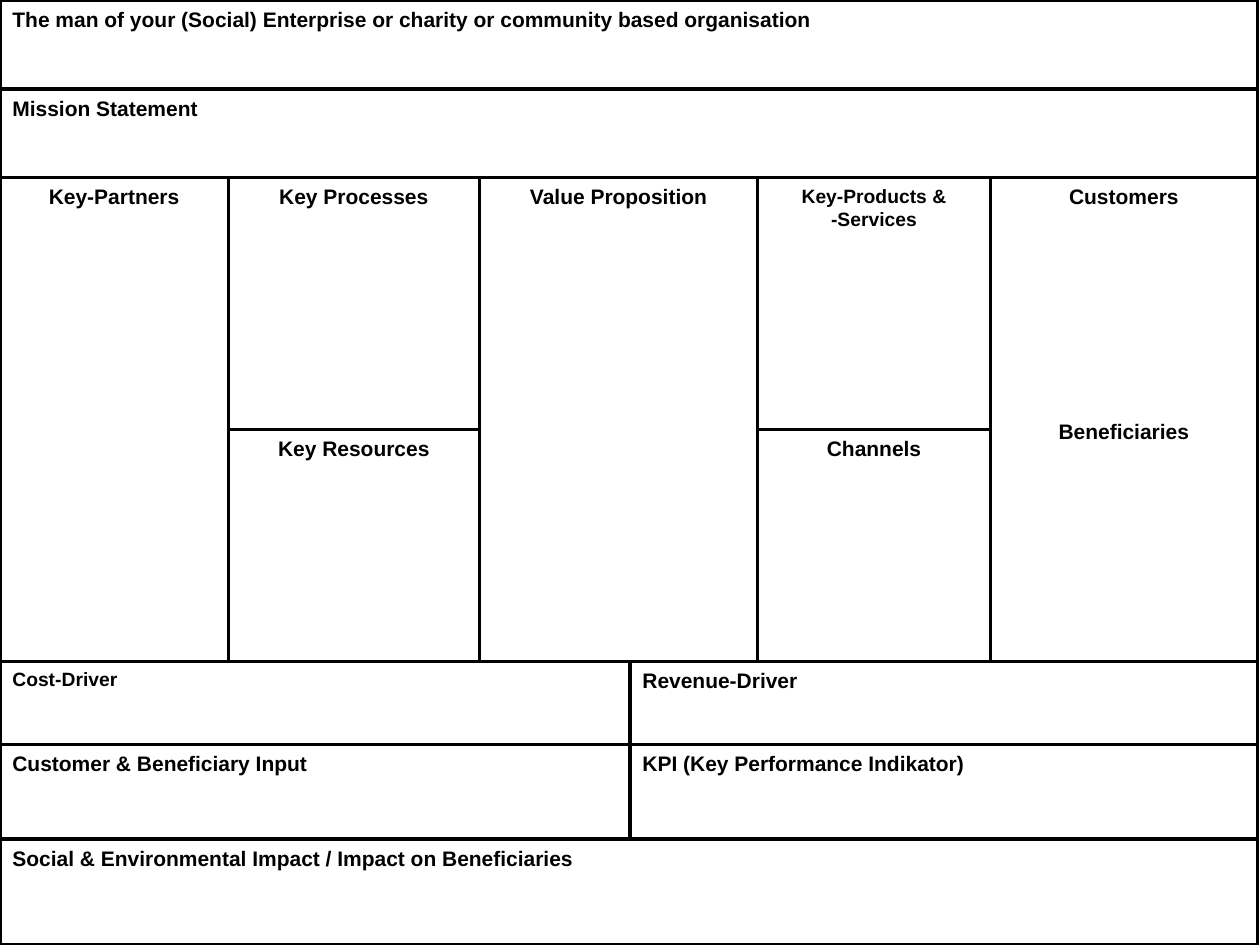
from pptx import Presentation
from pptx.dml.color import RGBColor
from pptx.enum.shapes import MSO_SHAPE
from pptx.enum.text import MSO_ANCHOR, PP_ALIGN
from pptx.util import Pt

COLORS = {"ink": "000000", "paper": "FFFFFF"}
FONT = "Arial"

# Grid lines of the canvas, in points
ROWS = [0, 51, 101.5, 245.5, 378, 425.5, 479.5, 540]
COLS = [0, 130.5, 274, 433, 566, 718.5]
LEFT, MIDDLE, RIGHT = COLS[0], 360, COLS[-1]

# Full-width and half-width fields: label, left, right, first row line, size
FIELDS = [
    ("The man of your (Social) Enterprise or charity or community based organisation",
     LEFT, RIGHT, 0, 12),
    ("Mission Statement", LEFT, RIGHT, 1, 12),
    ("Cost-Driver", LEFT, MIDDLE, 4, 11),
    ("Revenue-Driver", MIDDLE, RIGHT, 4, 12),
    ("Customer & Beneficiary Input", LEFT, MIDDLE, 5, 12),
    ("KPI (Key Performance Indikator)", MIDDLE, RIGHT, 5, 12),
    ("Social & Environmental Impact / Impact on Beneficiaries", LEFT, RIGHT, 6, 12),
]

# Building blocks: labels, column, first and last row line, size, gap between labels
BLOCKS = [
    (["Key-Partners"], 0, 2, 4, 12, 0),
    (["Key Processes"], 1, 2, 3, 12, 0),
    (["Key Resources"], 1, 3, 4, 12, 0),
    (["Value Proposition"], 2, 2, 4, 12, 0),
    (["Key-Products &", "-Services"], 3, 2, 3, 11, 0),
    (["Channels"], 3, 3, 4, 12, 0),
    (["Customers", "Beneficiaries"], 4, 2, 4, 12, 120),
]


def color(name):
    return RGBColor.from_string(COLORS[name])


def add_box(slide, labels, left, top, right, bottom, size, align, gap=0):
    """Draw an outlined box with its labels at the top, gap points apart."""
    s = slide.shapes.add_shape(MSO_SHAPE.RECTANGLE, Pt(left), Pt(top),
                               Pt(right - left), Pt(bottom - top))
    s.shadow.inherit = False
    s.fill.solid()
    s.fill.fore_color.rgb = color("paper")
    s.line.color.rgb = color("ink")
    s.line.width = Pt(2)

    tf = s.text_frame
    tf.word_wrap = True
    tf.vertical_anchor = MSO_ANCHOR.TOP
    for i, label in enumerate(labels):
        p = tf.add_paragraph() if i else tf.paragraphs[0]
        p.text = label
        p.alignment = align
        p.space_before = Pt(gap if i else 0)
        p.font.name = FONT
        p.font.size = Pt(size)
        p.font.bold = True
        p.font.color.rgb = color("ink")


def add_fields(slide):
    for label, left, right, row, size in FIELDS:
        add_box(slide, [label], left, ROWS[row], right, ROWS[row + 1],
                size, PP_ALIGN.LEFT)


def add_blocks(slide):
    for labels, col, first, last, size, gap in BLOCKS:
        add_box(slide, labels, COLS[col], ROWS[first], COLS[col + 1], ROWS[last],
                size, PP_ALIGN.CENTER, gap)


def main():
    prs = Presentation()
    prs.slide_width, prs.slide_height = Pt(720), Pt(540)
    slide = prs.slides.add_slide(prs.slide_layouts[6])
    add_fields(slide)
    add_blocks(slide)
    prs.save("out.pptx")


if __name__ == "__main__":
    main()
